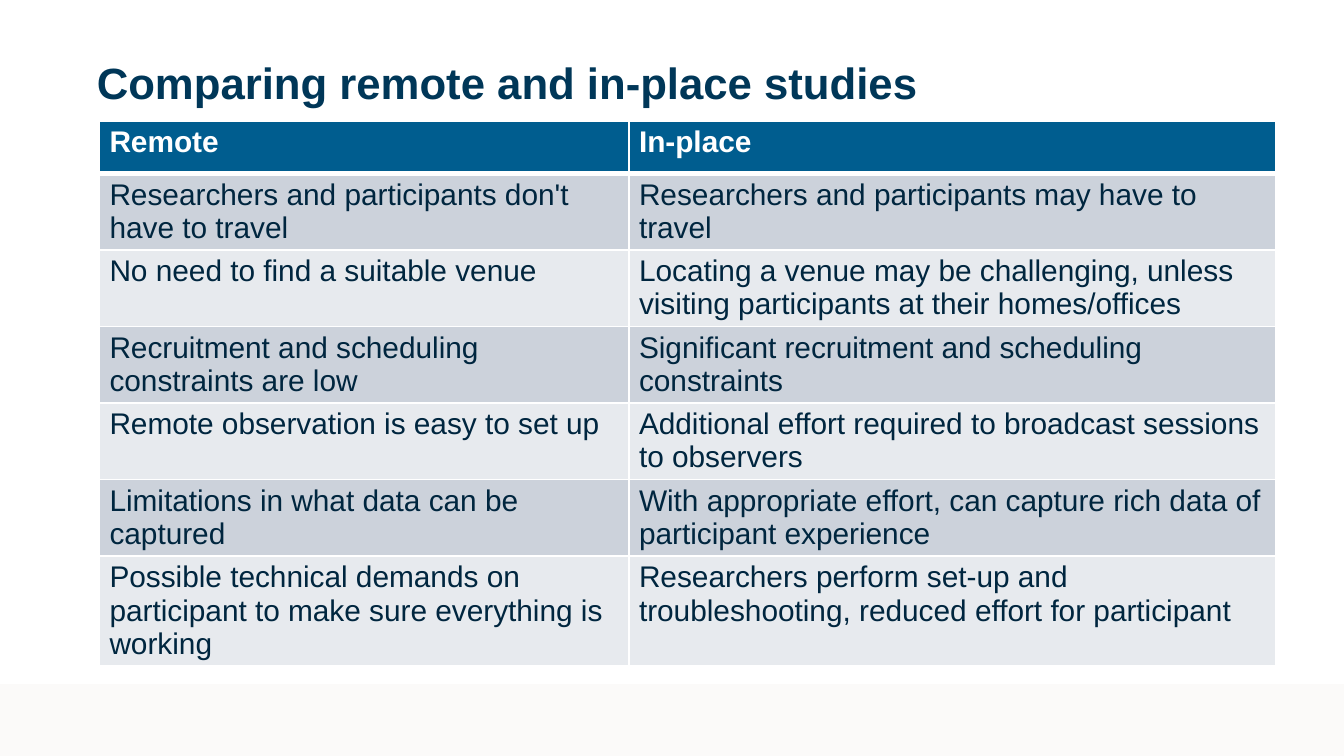
from dataclasses import dataclass

from lxml.etree import SubElement
from pptx import Presentation
from pptx.dml.color import RGBColor
from pptx.enum.shapes import MSO_SHAPE
from pptx.enum.text import MSO_ANCHOR, MSO_AUTO_SIZE, PP_ALIGN
from pptx.oxml.ns import qn
from pptx.util import Inches, Pt


@dataclass(frozen=True)
class Theme:
    font: str = "Arial"
    title_size: float = 23.4
    table_size: float = 16
    title: str = "003758"
    text: str = "00263F"
    white: str = "FFFFFF"
    header: str = "005D8F"
    bands: tuple = ("CCD2DB", "E7EAEE")
    footer: str = "FBFAF9"
    thin_line: float = 1
    thick_line: float = 3


class SlideBuilder:
    def __init__(self, slide, theme):
        self.slide = slide
        self.theme = theme

    def format_font(self, font, size, color, bold):
        formats = {"name": self.theme.font, "size": Pt(size), "bold": bold}
        for name, value in formats.items():
            setattr(font, name, value)
        font.color.rgb = RGBColor.from_string(color)

    def add_bar(self, box, color):
        bar = self.slide.shapes.add_shape(MSO_SHAPE.RECTANGLE, *map(Inches, box))
        bar.shadow.inherit = False
        bar.fill.solid()
        bar.fill.fore_color.rgb = RGBColor.from_string(color)
        bar.line.fill.background()

    def set_title(self, text, box):
        title = self.slide.shapes.title
        for name, value in zip(("left", "top", "width", "height"), box):
            setattr(title, name, Inches(value))
        frame = title.text_frame
        formats = {
            "margin_left": Inches(0.1), "margin_right": Inches(0.1),
            "margin_top": Inches(0.1), "margin_bottom": Inches(0.1),
            "vertical_anchor": MSO_ANCHOR.MIDDLE,
            "word_wrap": True, "auto_size": MSO_AUTO_SIZE.NONE,
        }
        for name, value in formats.items():
            setattr(frame, name, value)
        frame.text = text
        paragraph = frame.paragraphs[0]
        paragraph.alignment = PP_ALIGN.LEFT
        self.format_font(paragraph.runs[0].font, self.theme.title_size,
                         self.theme.title, True)

    def set_borders(self, cell, top, bottom):
        """Draw white borders, which precede the fill in the cell properties."""
        properties = cell._tc.get_or_add_tcPr()
        thin = self.theme.thin_line
        widths = {"a:lnL": thin, "a:lnR": thin, "a:lnT": top, "a:lnB": bottom}
        for index, (tag, width) in enumerate(widths.items()):
            line = SubElement(properties, qn(tag), w=str(Pt(width)))
            fill = SubElement(line, qn("a:solidFill"))
            SubElement(fill, qn("a:srgbClr"), val=self.theme.white)
            properties.insert(index, line)

    def format_cell(self, cell, text, row_index):
        theme = self.theme
        is_header = row_index == 0
        margins = {"margin_left": 5.4, "margin_right": 5.4,
                   "margin_top": 2.7, "margin_bottom": 2.7}
        for name, value in margins.items():
            setattr(cell, name, Pt(value))
        cell.text = text
        self.format_font(cell.text_frame.paragraphs[0].runs[0].font,
                         theme.table_size,
                         theme.white if is_header else theme.text, is_header)
        color = theme.header if is_header else theme.bands[(row_index - 1) % 2]
        cell.fill.solid()
        cell.fill.fore_color.rgb = RGBColor.from_string(color)
        # The thick rule separates the header from the first body row
        self.set_borders(
            cell,
            top=theme.thick_line if row_index == 1 else theme.thin_line,
            bottom=theme.thick_line if is_header else theme.thin_line)

    def add_table(self, rows, left, top, column_widths, row_heights):
        frame = self.slide.shapes.add_table(
            len(rows), len(column_widths), Inches(left), Inches(top),
            Inches(sum(column_widths)), Inches(sum(row_heights)))
        table = frame.table
        for column, width in zip(table.columns, column_widths):
            column.width = Inches(width)
        for row_index, (row, height) in enumerate(zip(rows, row_heights)):
            table.rows[row_index].height = Inches(height)
            for column_index, text in enumerate(row):
                self.format_cell(table.cell(row_index, column_index), text, row_index)


COMPARISON = [
    ("Remote", "In-place"),
    ("Researchers and participants don't have to travel",
     "Researchers and participants may have to travel"),
    ("No need to find a suitable venue",
     "Locating a venue may be challenging, unless visiting participants "
     "at their homes/offices"),
    ("Recruitment and scheduling constraints are low",
     "Significant recruitment and scheduling constraints"),
    ("Remote observation is easy to set up",
     "Additional effort required to broadcast sessions to observers"),
    ("Limitations in what data can be captured",
     "With appropriate effort, can capture rich data of participant experience"),
    ("Possible technical demands on participant to make sure everything is working",
     "Researchers perform set-up and troubleshooting, reduced effort for participant"),
]


def main():
    # Widescreen page, 16 to 9
    presentation = Presentation()
    presentation.slide_width = Inches(10)
    presentation.slide_height = Inches(10) * 9 // 16
    title_only = presentation.slide_layouts[5]
    theme = Theme()
    builder = SlideBuilder(presentation.slides.add_slide(title_only), theme)

    # Footer band
    builder.add_bar((0, 5.09, 10, 0.54), theme.footer)

    # Title
    builder.set_title("Comparing remote and in-place studies", (0.62, 0.31, 8.75, 0.6))

    # Comparison table: minimum row heights, which grow with the wrapped text
    builder.add_table(COMPARISON, 0.74, 0.9, column_widths=(3.94, 4.81),
                      row_heights=(0.39, 0.39, 0.57, 0.39, 0.57, 0.57, 0.57))

    presentation.save("out.pptx")


if __name__ == "__main__":
    main()
